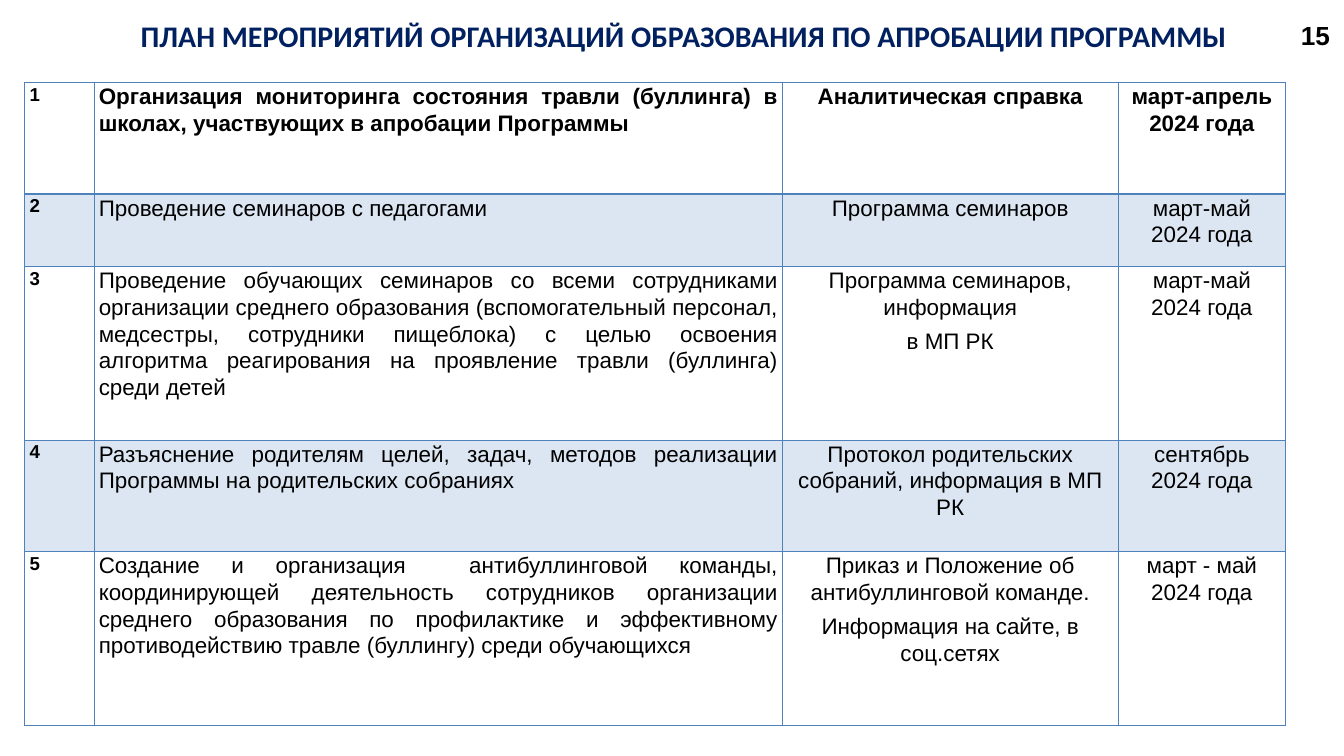
from lxml import etree
from pptx import Presentation
from pptx import util as u
from pptx.dml import color
from pptx.enum import text
from pptx.oxml import ns

BLUE, NAVY, BLACK, WHITE, BAND = "4F81BD", "002060", "000000", "FFFFFF", "DCE6F2"
COLUMN_WIDTHS = [1.03, 10.24, 5, 2.49]
ROW_HEIGHTS = [1.66, 1.08, 2.58, 1.66, 2.58]
ACTIVITIES = [
    ("Организация мониторинга состояния травли (буллинга) в школах, участвующих в апробации Программы",
     ["Аналитическая справка"], ["март-апрель 2024 года"]),
    ("Проведение семинаров с педагогами",
     ["Программа семинаров"], ["март-май", "2024 года"]),
    ("Проведение обучающих семинаров со всеми сотрудниками организации среднего образования "
     "(вспомогательный персонал, медсестры, сотрудники пищеблока) с целью освоения алгоритма "
     "реагирования на проявление травли (буллинга) среди детей",
     ["Программа семинаров, информация", "в МП РК"], ["март-май", "2024 года"]),
    ("Разъяснение родителям целей, задач, методов реализации Программы на родительских собраниях",
     ["Протокол родительских собраний, информация в МП РК"], ["сентябрь", "2024 года"]),
    ("Создание и организация  антибуллинговой команды, координирующей деятельность сотрудников "
     "организации среднего образования по профилактике и эффективному противодействию травле "
     "(буллингу) среди обучающихся",
     ["Приказ и Положение об антибуллинговой команде.", "Информация на сайте, в соц.сетях"],
     ["март - май", "2024 года"]),
]


def rgb(value):
    return color.RGBColor.from_string(value)


def write(frame, lines, size=24, font="Arial", fill=BLACK, bold=False, align="LEFT", after=0, spacing=1):
    frame.word_wrap = True
    for index, line in enumerate(lines):
        para = frame.paragraphs[0] if index == 0 else frame.add_paragraph()
        para.alignment = getattr(text.PP_ALIGN, align)
        para.line_spacing = spacing
        para.space_after = u.Pt(after)
        span = para.add_run()
        span.text = line
        span.font.name = font
        span.font.size = u.Pt(size)
        span.font.bold = bold
        span.font.color.rgb = rgb(fill)


def add_label(page, area, line, **style):
    box = page.shapes.add_textbox(*map(u.Inches, area))
    write(box.text_frame, [line], **style)


def set_borders(cell, bottom):
    properties = cell._tc.get_or_add_tcPr()
    for side, width in zip("LRTB", (1, 1, 1, bottom)):
        line = etree.SubElement(properties, ns.qn("a:ln" + side), w=str(u.Pt(width)))
        solid = etree.SubElement(line, ns.qn("a:solidFill"))
        etree.SubElement(solid, ns.qn("a:srgbClr"), val=BLUE)


def format_cell(cell, fill, bottom):
    cell.margin_left = cell.margin_right = u.Inches(0.07)
    cell.margin_top = cell.margin_bottom = 0
    set_borders(cell, bottom)
    cell.fill.solid()
    cell.fill.fore_color.rgb = rgb(fill)


def add_plan(page, area):
    table = page.shapes.add_table(len(ROW_HEIGHTS), len(COLUMN_WIDTHS), *map(u.Inches, area)).table
    table.first_row = table.horz_banding = False
    for column, width in zip(table.columns, COLUMN_WIDTHS):
        column.width = u.Inches(width)
    for index, (activity, results, dates) in enumerate(ACTIVITIES):
        row = table.rows[index]
        row.height = u.Inches(ROW_HEIGHTS[index])
        first = index == 0
        for cell in row.cells:
            format_cell(cell, BAND if index % 2 else WHITE, 2 if first else 1)
        number, task, outcome, period = [cell.text_frame for cell in row.cells]
        write(number, [str(index + 1)], size=20, bold=True, align="JUSTIFY", after=8, spacing=1.07)
        write(task, [activity], bold=first, align="JUSTIFY", after=8, spacing=1.07)
        write(outcome, results, bold=first, align="CENTER", after=8, spacing=1.07)
        write(period, dates, bold=first, align="CENTER", spacing=1.07)


def main():
    deck = Presentation()
    deck.slide_width, deck.slide_height = u.Inches(20), u.Inches(11.25)
    page = deck.slides.add_slide(deck.slide_layouts[6])
    add_label(page, (1.18, 0.22, 18, 0.91),
              "ПЛАН МЕРОПРИЯТИЙ ОРГАНИЗАЦИЙ ОБРАЗОВАНИЯ ПО АПРОБАЦИИ ПРОГРАММЫ",
              size=32, font="Calibri", fill=NAVY, bold=True, align="CENTER")
    add_plan(page, (0.37, 1.23, sum(COLUMN_WIDTHS), sum(ROW_HEIGHTS)))
    add_label(page, (19.26, 0.24, 0.7, 0.57), "15", size=28, bold=True)
    deck.save("out.pptx")


if __name__ == "__main__":
    main()
